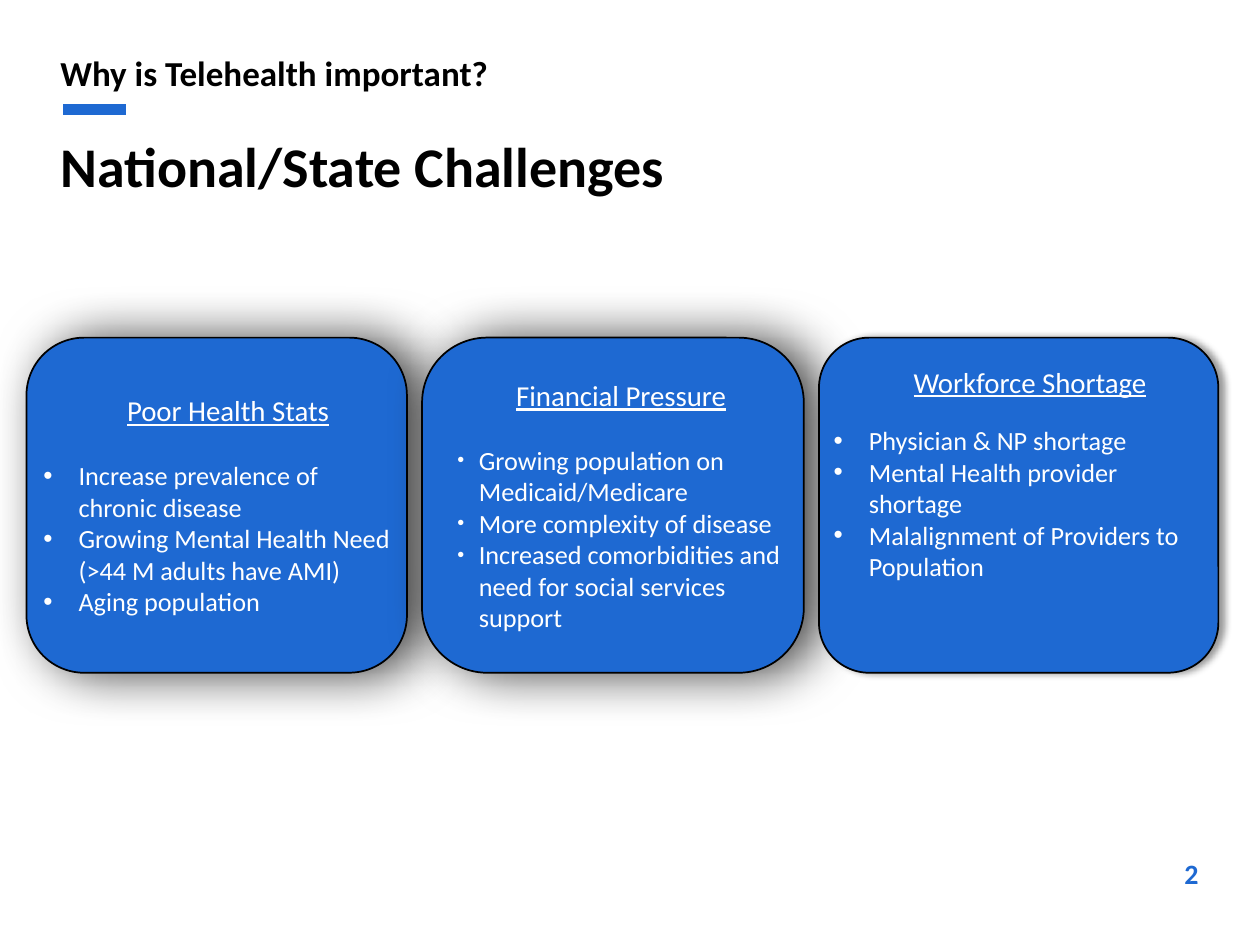
from lxml.etree import SubElement
from pptx import Presentation
from pptx.dml.color import RGBColor
from pptx.enum.shapes import MSO_CONNECTOR, MSO_SHAPE
from pptx.enum.text import MSO_ANCHOR, PP_ALIGN
from pptx.oxml.ns import qn
from pptx.util import Inches, Pt

BLUE = RGBColor(0x1E, 0x69, 0xD2)
BLACK = RGBColor(0, 0, 0)
WHITE = RGBColor(0xFF, 0xFF, 0xFF)

TITLE = {"name": "Calibri", "size": Pt(32), "bold": True, "color": BLACK}
KICKER = {**TITLE, "size": Pt(20)}
PAGE_NUMBER = {**TITLE, "size": Pt(16), "color": BLUE}
POINT = {"name": "Calibri", "size": Pt(15), "color": WHITE}
HEADING = {**POINT, "size": Pt(16.5), "underline": True}

PANEL_TOP, PANEL_HEIGHT = 2.68, 2.66
WIDE_SHADOW = {"blur": 30, "distance": 9.4, "opacity": 75}
TIGHT_SHADOW = {"blur": 4, "distance": 3, "opacity": 40}
HANGING = {"margin": 0.28, "hang": 0.28, "bullet_size": 100}
CLOSE = {"margin": 0.3, "hang": 0.17, "bullet_size": 75}

PANELS = [
    {"left": 0.21, "width": 3.02, "corner": 0.172, "shadow": WIDE_SHADOW,
     "heading": "Poor Health Stats", "shift": 0.18, "gap": 18.3, "foot": 0,
     "bullets": HANGING,
     "points": ["Increase prevalence of chronic disease",
                "Growing Mental Health Need (>44 M adults have AMI)",
                "Aging population"]},
    {"left": 3.35, "width": 3.03, "corner": 0.194, "shadow": WIDE_SHADOW,
     "heading": "Financial Pressure", "shift": 0.13, "gap": 18.3, "foot": 0,
     "bullets": CLOSE,
     "points": ["Growing population on Medicaid/Medicare",
                "More complexity of disease",
                "Increased comorbidities and need for social services support"]},
    {"left": 6.5, "width": 3.17, "corner": 0.15, "shadow": TIGHT_SHADOW,
     "heading": "Workforce Shortage", "shift": 0.18, "gap": 14.6, "foot": 0.51,
     "bullets": HANGING,
     "points": ["Physician & NP shortage",
                "Mental Health provider shortage",
                "Malalignment of Providers to Population"]},
]


def write(para, text, style):
    """Add a span of text in the given style."""
    span = para.add_run()
    span.text = text
    for name, value in style.items():
        if name == "color":
            span.font.color.rgb = value
        else:
            setattr(span.font, name, value)


def indent(para, margin, first):
    """Set the left margin and first-line indent in inches."""
    properties = para._p.get_or_add_pPr()
    properties.set("marL", str(Inches(margin)))
    properties.set("indent", str(Inches(first)))
    return properties


def add_bullet(para, margin, hang, bullet_size):
    """Give a paragraph a hanging round bullet."""
    properties = indent(para, margin, -hang)
    SubElement(properties, qn("a:buSzPct"), val=str(bullet_size * 1000))
    SubElement(properties, qn("a:buFont"), typeface="Arial")
    SubElement(properties, qn("a:buChar"), char="•")


def add_shadow(shape, blur, distance, opacity):
    """Cast a black shadow to the right of a shape."""
    shape.shadow.inherit = False
    effects = shape._element.spPr.find(qn("a:effectLst"))
    shadow = SubElement(effects, qn("a:outerShdw"), blurRad=str(Pt(blur)),
                        dist=str(Pt(distance)), dir="0", algn="ctr",
                        rotWithShape="0")
    color = SubElement(shadow, qn("a:srgbClr"), val=str(BLACK))
    SubElement(color, qn("a:alpha"), val=str(opacity * 1000))


def add_label(page, box, text, style, anchor=MSO_ANCHOR.MIDDLE, **layout):
    """Place one line of text in a box."""
    frame = page.shapes.add_textbox(*map(Inches, box)).text_frame
    frame.word_wrap = True
    frame.vertical_anchor = anchor
    para = frame.paragraphs[0]
    for name, value in layout.items():
        setattr(para, name, value)
    write(para, text, style)


def add_header(page, left, top, width):
    """Place the kicker, accent line and title."""
    add_label(page, (left, top, width, 0.57), "Why is Telehealth important?",
              KICKER, MSO_ANCHOR.TOP, line_spacing=0.9)
    line_left, line_top = left + 0.12, top + 0.47
    accent = page.shapes.add_connector(
        MSO_CONNECTOR.STRAIGHT, Inches(line_left), Inches(line_top),
        Inches(line_left + 0.5), Inches(line_top))
    accent.line.color.rgb = BLUE
    accent.line.width = Pt(6)
    SubElement(accent._element.spPr, qn("a:effectLst"))
    add_label(page, (left, top + 0.58, width, 0.66),
              "National/State Challenges", TITLE)


def add_panel(page, box, panel):
    """Place a rounded panel with a heading and bullet points."""
    shape = page.shapes.add_shape(MSO_SHAPE.ROUNDED_RECTANGLE,
                                  *map(Inches, box))
    shape.adjustments[0] = panel["corner"]
    shape.fill.solid()
    shape.fill.fore_color.rgb = BLUE
    shape.line.color.rgb = BLACK
    shape.line.width = Pt(1)
    add_shadow(shape, **panel["shadow"])

    frame = shape.text_frame
    layout = {"word_wrap": True, "vertical_anchor": MSO_ANCHOR.MIDDLE,
              "margin_left": 0, "margin_top": 0, "margin_right": 0,
              "margin_bottom": Inches(panel["foot"])}
    for name, value in layout.items():
        setattr(frame, name, value)

    heading = frame.paragraphs[0]
    heading.alignment = PP_ALIGN.CENTER
    heading.space_after = Pt(panel["gap"])
    indent(heading, 0, panel["shift"])
    write(heading, panel["heading"], HEADING)
    for point in panel["points"]:
        para = frame.add_paragraph()
        para.alignment = PP_ALIGN.LEFT
        add_bullet(para, **panel["bullets"])
        write(para, point, POINT)


def main():
    """Build and save the slide."""
    deck = Presentation()
    deck.slide_width, deck.slide_height = Inches(10), Inches(7.5)
    page = deck.slides.add_slide(deck.slide_layouts[6])
    add_header(page, 0.38, 0.4, 9.12)
    for panel in PANELS:
        box = (panel["left"], PANEL_TOP, panel["width"], PANEL_HEIGHT)
        add_panel(page, box, panel)
    add_label(page, (8.88, 6.75, 0.73, 0.37), "2", PAGE_NUMBER,
              alignment=PP_ALIGN.RIGHT)
    deck.save("out.pptx")


if __name__ == "__main__":
    main()
